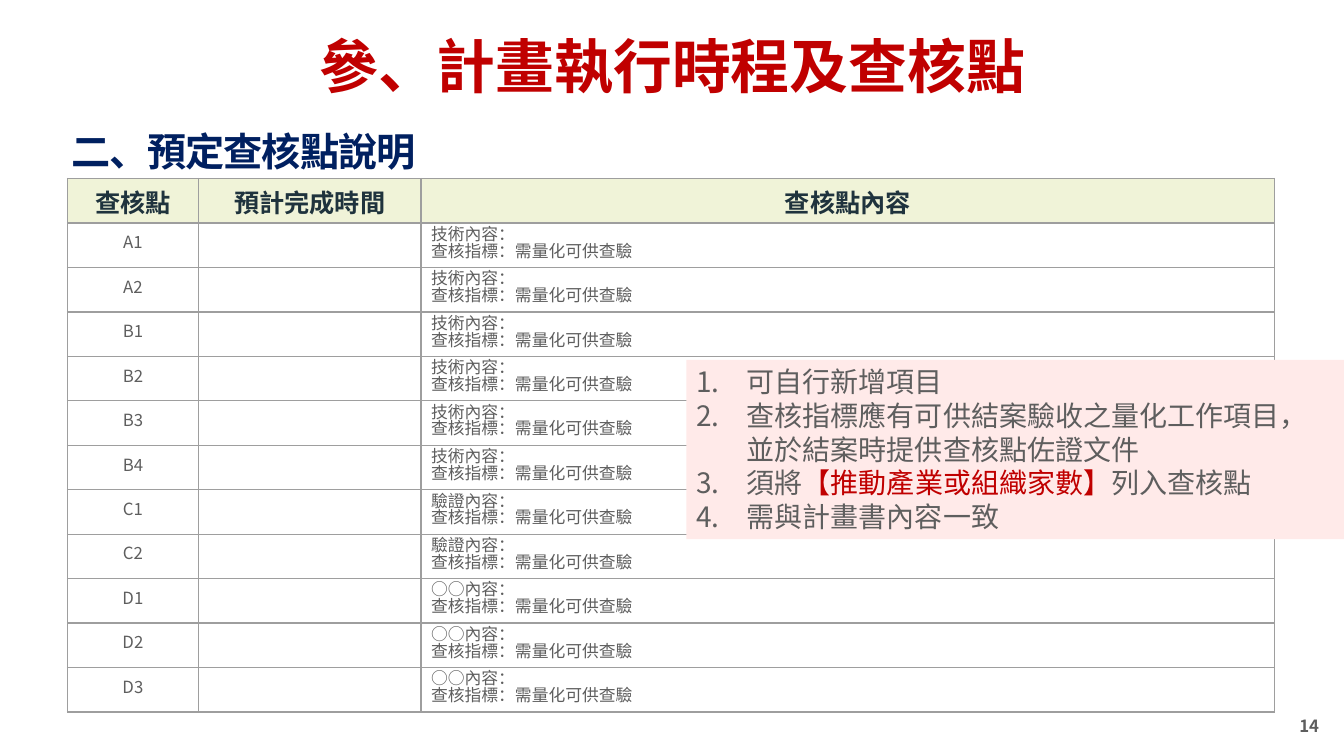
"""Build the slide that lists the planned checkpoints of a project."""
from lxml.etree import SubElement
from pptx import Presentation
from pptx.dml.color import RGBColor
from pptx.enum.shapes import MSO_SHAPE
from pptx.enum.text import MSO_ANCHOR, PP_ALIGN
from pptx.oxml.ns import qn
from pptx.util import Cm, Pt

TITLE = "參、計畫執行時程及查核點"
SUBTITLE = "二、預定查核點說明"
PAGE_NUMBER = "14"
HEADERS = ["查核點", "預計完成時間", "查核點內容"]
CHECKPOINTS = [
    ("技術內容：", ["A1", "A2", "B1", "B2", "B3", "B4"]),
    ("驗證內容：", ["C1", "C2"]),
    ("○○內容：", ["D1", "D2", "D3"]),
]
INDICATOR = "查核指標：需量化可供查驗"
NOTES = [
    [("可自行新增項目", "gray")],
    [("查核指標應有可供結案驗收之量化工作項目，並於結案時提供查核點佐證文件", "gray")],
    [("須將", "gray"), ("【推動產業或組織家數】", "red"), ("列入查核點", "gray")],
    [("需與計畫書內容一致", "gray")],
]
COLORS = {
    "red": "C00000", "navy": "002060", "gray": "5E5E5E", "dark": "1F333D",
    "header": "F0F3D8", "white": "FFFFFF", "border": "9E9E9E", "note": "FFEAE9",
}
FONT = "Noto Sans CJK SC"
SLIDE_WIDTH, SLIDE_HEIGHT = 33.87, 19.05
COLUMN_WIDTHS = [3.3, 5.61, 21.51]
ROW_HEIGHT = 1.12
NOTE_LEFT = 17.3


def color(name):
    return RGBColor.from_string(COLORS[name])


def add_run(paragraph, text, size, color_name, bold=False, latin=FONT):
    run = paragraph.add_run()
    run.text = text
    run.font.size = Pt(size)
    run.font.bold = bold
    run.font.name = latin
    run.font.color.rgb = color(color_name)
    SubElement(run.font._element, qn("a:ea"), typeface=FONT)
    return run


def add_text(slide, box, text, size, color_name, margin, anchor, align, wrap=True):
    frame = slide.shapes.add_textbox(*map(Cm, box)).text_frame
    frame.word_wrap = wrap
    frame.vertical_anchor = anchor
    frame.margin_left = frame.margin_right = Cm(margin)
    frame.margin_top = frame.margin_bottom = Cm(margin)
    paragraph = frame.paragraphs[0]
    paragraph.alignment = align
    return paragraph, add_run(paragraph, text, size, color_name, True)


def style_cell(cell, fill):
    cell.fill.solid()
    cell.fill.fore_color.rgb = color(fill)
    cell.vertical_anchor = MSO_ANCHOR.MIDDLE
    properties = cell._tc.get_or_add_tcPr()
    for index, side in enumerate(("a:lnL", "a:lnR", "a:lnT", "a:lnB")):
        line = SubElement(properties, qn(side), w=str(Pt(1)))
        line_fill = SubElement(line, qn("a:solidFill"))
        SubElement(line_fill, qn("a:srgbClr"), val=COLORS["border"])
        properties.insert(index, line)


def write_cell(cell, lines, align):
    for index, text in enumerate(lines):
        frame = cell.text_frame
        paragraph = frame.add_paragraph() if index else frame.paragraphs[0]
        paragraph.alignment = align
        paragraph.line_spacing = Pt(12)
        add_run(paragraph, text, 12, "gray")


def add_checkpoint_table(slide):
    rows = [(code, content) for content, codes in CHECKPOINTS for code in codes]
    row_count = len(rows) + 1
    table = slide.shapes.add_table(
        row_count, len(HEADERS), Cm(1.7), Cm(4.5),
        Cm(sum(COLUMN_WIDTHS)), Cm(ROW_HEIGHT * row_count)).table
    for column, width in zip(table.columns, COLUMN_WIDTHS):
        column.width = Cm(width)
    for row in table.rows:
        row.height = Cm(ROW_HEIGHT)
    for index, cell in enumerate(table.iter_cells()):
        style_cell(cell, "header" if index < len(HEADERS) else "white")
    for index, header in enumerate(HEADERS):
        paragraph = table.cell(0, index).text_frame.paragraphs[0]
        paragraph.alignment = PP_ALIGN.CENTER
        add_run(paragraph, header, 18, "dark", True, "Arial")
    for index, (code, content) in enumerate(rows, 1):
        write_cell(table.cell(index, 0), [code], PP_ALIGN.CENTER)
        write_cell(table.cell(index, 2), [content, INDICATOR], PP_ALIGN.LEFT)


def add_note(slide):
    shape = slide.shapes.add_shape(
        MSO_SHAPE.RECTANGLE, Cm(NOTE_LEFT), Cm(9.07),
        Cm(SLIDE_WIDTH - NOTE_LEFT), Cm(4.52))
    shape.shadow.inherit = False
    shape.fill.solid()
    shape.fill.fore_color.rgb = color("note")
    shape.line.fill.background()
    frame = shape.text_frame
    frame.word_wrap = True
    frame.vertical_anchor = MSO_ANCHOR.TOP
    for index, runs in enumerate(NOTES):
        paragraph = frame.add_paragraph() if index else frame.paragraphs[0]
        paragraph.alignment = PP_ALIGN.LEFT
        properties = paragraph._p.get_or_add_pPr()
        properties.set("marL", str(Cm(1.27)))
        properties.set("indent", str(-Cm(1.27)))
        SubElement(properties, qn("a:buFont"), typeface=FONT)
        SubElement(properties, qn("a:buAutoNum"), type="arabicPeriod")
        for text, color_name in runs:
            add_run(paragraph, text, 20, color_name)


def main():
    presentation = Presentation()
    presentation.slide_width = Cm(SLIDE_WIDTH)
    presentation.slide_height = Cm(SLIDE_HEIGHT)
    slide = presentation.slides.add_slide(presentation.slide_layouts[6])
    add_text(slide, (0, 0.64, SLIDE_WIDTH, 2), TITLE, 42, "red", 0.15,
             MSO_ANCHOR.MIDDLE, PP_ALIGN.CENTER)
    add_text(slide, (32.59, 17.91, 0.81, 0.79), PAGE_NUMBER, 12, "gray", 0.15,
             MSO_ANCHOR.BOTTOM, PP_ALIGN.CENTER, False)
    paragraph, run = add_text(slide, (1.68, 2.49, 30.5, 2.08), SUBTITLE, 28, "navy",
                              0.13, MSO_ANCHOR.TOP, PP_ALIGN.LEFT)
    paragraph.line_spacing = 1.5
    run.font._element.set("spc", "-80")
    add_checkpoint_table(slide)
    add_note(slide)
    presentation.save("out.pptx")


if __name__ == "__main__":
    main()
